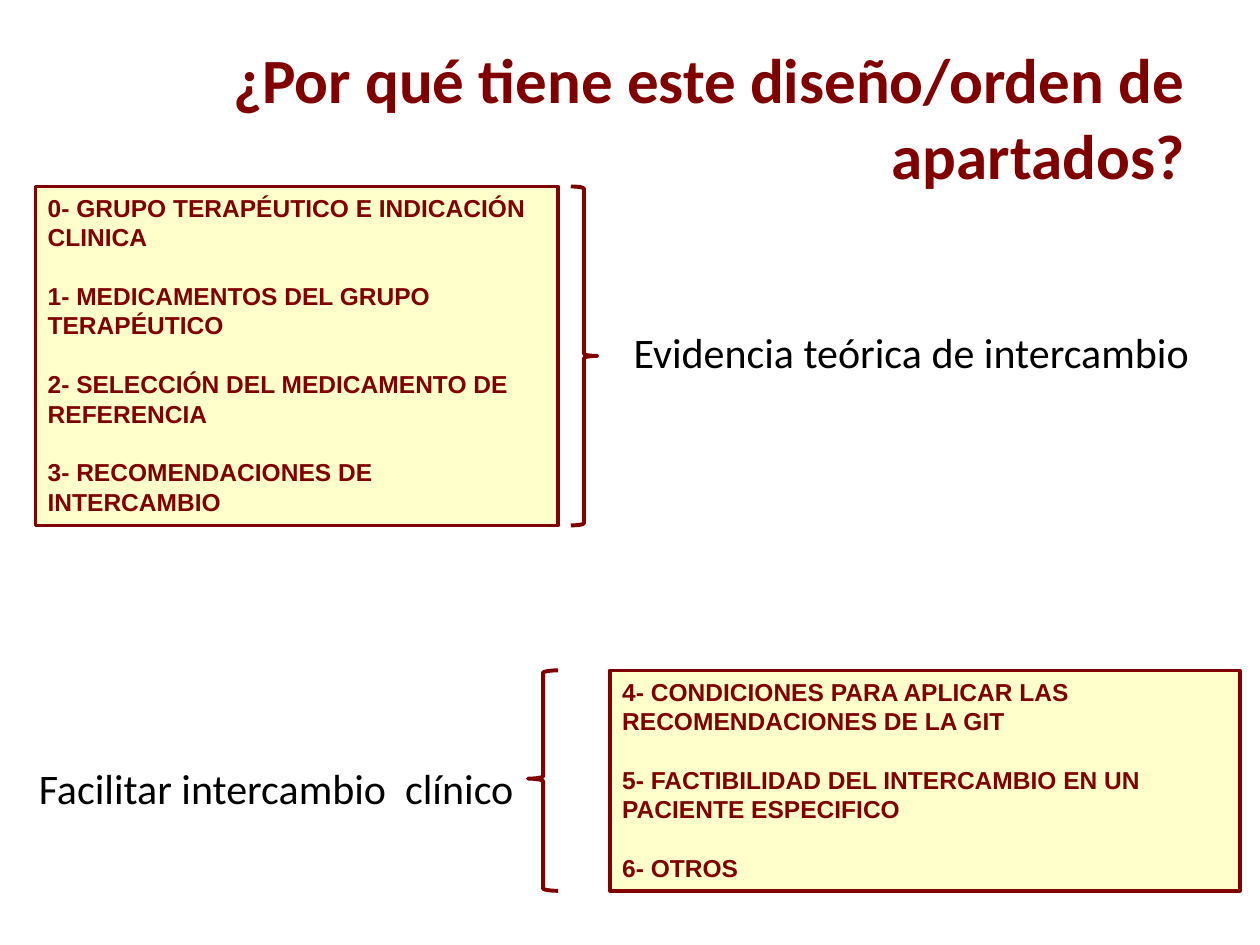
from pptx import Presentation
from pptx import util as u
from pptx.dml.color import RGBColor
from pptx.enum import shapes, text

COLORS = {"maroon": "800000", "cream": "FFFFCC", "black": "000000"}
THEORY = [
    "0- GRUPO TERAPÉUTICO E INDICACIÓN CLINICA",
    "1- MEDICAMENTOS DEL GRUPO TERAPÉUTICO",
    "2- SELECCIÓN DEL MEDICAMENTO DE REFERENCIA",
    "3- RECOMENDACIONES DE INTERCAMBIO",
]
CLINIC = [
    "4- CONDICIONES PARA APLICAR LAS RECOMENDACIONES DE LA GIT",
    "5- FACTIBILIDAD DEL INTERCAMBIO EN UN PACIENTE ESPECIFICO",
    "6- OTROS",
]


def color(name):
    return RGBColor.from_string(COLORS[name])


def inches(box):
    return [u.Inches(length) for length in box]


def style(paragraph, font, size, ink, bold=False, align=text.PP_ALIGN.LEFT):
    paragraph.alignment = align
    for run in paragraph.runs:
        run.font.name = font
        run.font.size = u.Pt(size)
        run.font.bold = bold
        run.font.color.rgb = color(ink)


def add_title(slide, box, wording):
    title = slide.shapes.add_textbox(*inches(box)).text_frame
    title.word_wrap = True
    title.vertical_anchor = text.MSO_ANCHOR.MIDDLE
    title.text = wording
    style(title.paragraphs[0], "Calibri", 36, "maroon", True, text.PP_ALIGN.RIGHT)


def add_sections(slide, box, sections):
    panel = slide.shapes.add_shape(shapes.MSO_SHAPE.RECTANGLE, *inches(box))
    panel.shadow.inherit = False
    panel.fill.solid()
    panel.fill.fore_color.rgb = color("cream")
    panel.line.color.rgb = color("maroon")
    panel.line.width = u.Pt(2)
    frame = panel.text_frame
    frame.word_wrap = True
    frame.vertical_anchor = text.MSO_ANCHOR.TOP
    frame.text = "\n".join(sections)
    for paragraph in frame.paragraphs:
        style(paragraph, "Arial", 14, "maroon", True)
    # One line of space between sections
    for paragraph in frame.paragraphs[1:]:
        paragraph.space_before = u.Pt(16.8)


def add_brace(slide, box, rotation=0, adjustments=()):
    brace = slide.shapes.add_shape(shapes.MSO_SHAPE.RIGHT_BRACE, *inches(box))
    brace.shadow.inherit = False
    brace.fill.background()
    brace.line.color.rgb = color("maroon")
    brace.line.width = u.Pt(2.25)
    brace.rotation = rotation
    for index, value in enumerate(adjustments):
        brace.adjustments[index] = value


def add_purpose(slide, box, wording):
    frame = slide.shapes.add_textbox(*inches(box)).text_frame
    frame.word_wrap = False
    frame.auto_size = text.MSO_AUTO_SIZE.SHAPE_TO_FIT_TEXT
    frame.text = wording
    style(frame.paragraphs[0], "Calibri", 24, "black")


def add_theory_group(slide, left, top, height):
    add_sections(slide, (left, top, 4.15, height), THEORY)
    add_brace(slide, (left + 4.25, top, 0.21, height))
    add_purpose(slide, (left + 4.65, top + 1.06, 4.65, 0.5),
                "Evidencia teórica de intercambio")


def add_clinic_group(slide, left, top, height):
    add_purpose(slide, (left, top + 0.68, 4, 0.5), "Facilitar intercambio  clínico")
    add_brace(slide, (left + 3.98, top, 0.24, height), 180, (0.083, 0.509))
    add_sections(slide, (left + 4.63, top, 5, height), CLINIC)


def main():
    deck = Presentation()
    deck.slide_width, deck.slide_height = u.Inches(10), u.Inches(7.5)
    slide = deck.slides.add_slide(deck.slide_layouts[6])
    add_title(slide, (0.5, 0.3, 9, 1.25),
              "¿Por qué tiene este diseño/orden de apartados?")
    add_theory_group(slide, 0.28, 1.48, 2.69)
    add_clinic_group(slide, 0.21, 5.32, 1.75)
    deck.save("out.pptx")


if __name__ == "__main__":
    main()
